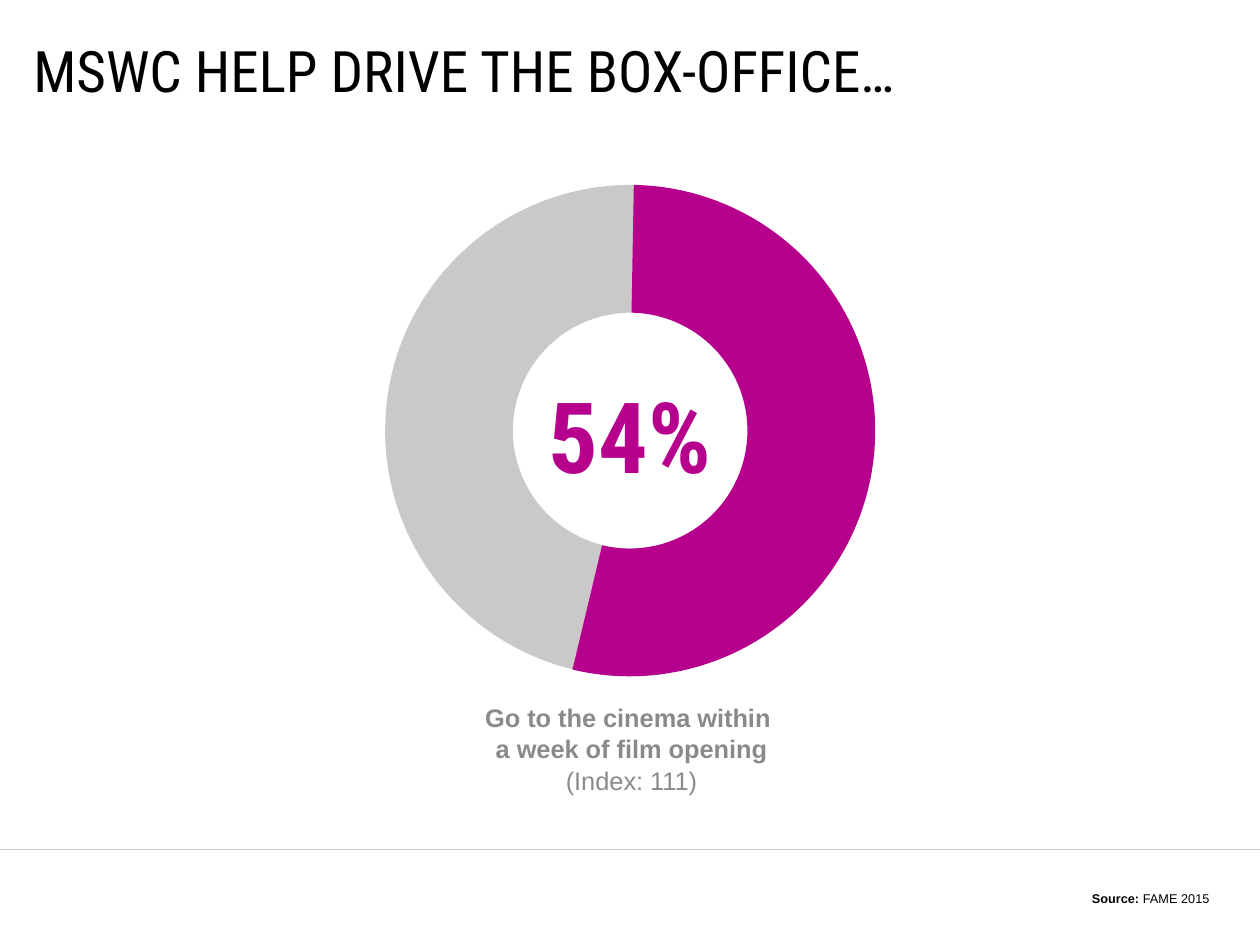
"""Build the slide on how soon the audience sees a newly opened film."""
from dataclasses import dataclass

from lxml import etree
from pptx import Presentation
from pptx.dml.color import RGBColor
from pptx.enum.shapes import MSO_CONNECTOR, MSO_SHAPE
from pptx.enum.text import MSO_ANCHOR, PP_ALIGN
from pptx.oxml.ns import qn
from pptx.util import Cm, Pt

BLOCK_ARC = MSO_SHAPE.BLOCK_ARC
STRAIGHT = MSO_CONNECTOR.STRAIGHT
MIDDLE, BOTTOM = MSO_ANCHOR.MIDDLE, MSO_ANCHOR.BOTTOM
LEFT, CENTER, RIGHT = PP_ALIGN.LEFT, PP_ALIGN.CENTER, PP_ALIGN.RIGHT

SLIDE_WIDTH, SLIDE_HEIGHT = 28, 21
RING_TOP, RING_SIZE, RING_THICKNESS = 4.11, 10.92, 0.26
ADJUSTMENT_PER_DEGREE = 0.6


@dataclass(frozen=True)
class Theme:
    """Colours, fonts and type sizes of the slide."""
    ink: str = "000000"
    accent: str = "B6008D"
    muted: str = "CAC8C8"
    caption: str = "8A8A8D"
    display_font: str = "Roboto Condensed"
    body_font: str = "Arial"
    title_size: float = 36
    figure_size: float = 62
    caption_size: float = 16
    source_size: float = 8
    rule_width: float = 0.5
    body_spacing: float = 1.05


class SlideBuilder:
    """Draws styled elements on the current slide."""

    def __init__(self, slide, theme):
        self.slide = slide
        self.theme = theme

    def rule(self, y):
        """Draw a thin line across the slide."""
        rule = self.slide.shapes.add_connector(
            STRAIGHT, Cm(0), Cm(y), Cm(SLIDE_WIDTH), Cm(y))
        rule.line.color.rgb = RGBColor.from_string(self.theme.muted)
        rule.line.width = Pt(self.theme.rule_width)
        properties = rule._element.find(qn("p:spPr"))
        etree.SubElement(properties, qn("a:effectLst"))

    def ring_part(self, left, start, end, color):
        """Draw a ring segment clockwise between two angles in degrees."""
        part = self.slide.shapes.add_shape(
            BLOCK_ARC, Cm(left), Cm(RING_TOP), Cm(RING_SIZE), Cm(RING_SIZE))
        part.adjustments[0] = start * ADJUSTMENT_PER_DEGREE
        part.adjustments[1] = end * ADJUSTMENT_PER_DEGREE
        part.adjustments[2] = RING_THICKNESS
        part.shadow.inherit = False
        part.fill.solid()
        part.fill.fore_color.rgb = RGBColor.from_string(color)
        part.line.fill.background()

    def text(self, area, paragraphs, font, size, color, align=LEFT,
             anchor=MIDDLE, inset=True, spacing=1.0):
        """Write paragraphs given as lists of (words, bold) runs."""
        box = self.slide.shapes.add_textbox(*(Cm(length) for length in area))
        frame = box.text_frame
        frame.word_wrap = True
        frame.vertical_anchor = anchor
        if not inset:
            frame.margin_left = frame.margin_right = Cm(0)
            frame.margin_top = frame.margin_bottom = Cm(0)
        for index, runs in enumerate(paragraphs):
            paragraph = frame.add_paragraph() if index else frame.paragraphs[0]
            paragraph.alignment = align
            paragraph.line_spacing = spacing
            paragraph.font.name = font
            paragraph.font.size = Pt(size)
            paragraph.font.color.rgb = RGBColor.from_string(color)
            weights = {bold for _, bold in runs}
            if len(weights) == 1:
                paragraph.font.bold = runs[0][1]
            for words, bold in runs:
                for number, line in enumerate(words.split("\n")):
                    if number:
                        paragraph.add_line_break()
                    run = paragraph.add_run()
                    run.text = line
                    if len(weights) > 1:
                        run.font.bold = bold


def main():
    """Create the presentation and save it."""
    presentation = Presentation()
    presentation.slide_width = Cm(SLIDE_WIDTH)
    presentation.slide_height = Cm(SLIDE_HEIGHT)
    theme = Theme()
    slide = presentation.slides.add_slide(presentation.slide_layouts[6])
    builder = SlideBuilder(slide, theme)

    builder.rule(18.87)
    builder.text((0.74, 0.97, 25.86, 1.14),
                 [[("MSWC HELP DRIVE THE BOX-OFFICE…", False)]],
                 theme.display_font, theme.title_size, theme.ink, inset=False)
    builder.text((5.87, 15.47, 16.33, 2.31),
                 [[("Go to the cinema within \na week of film opening", True)],
                  [("(Index: 111)", False)]],
                 theme.body_font, theme.caption_size, theme.caption, CENTER,
                 spacing=theme.body_spacing)
    builder.text((12.22, 19.66, 14.91, 0.61),
                 [[("Source: ", True), ("FAME 2015", False)]],
                 theme.body_font, theme.source_size, theme.ink, RIGHT, BOTTOM,
                 spacing=theme.body_spacing)
    builder.ring_part(8.56, 81.89, 270.87, theme.muted)
    builder.text((11.18, 8.13, 5.64, 2.9), [[("54%", True)]],
                 theme.display_font, theme.figure_size, theme.accent, CENTER,
                 spacing=theme.body_spacing)
    builder.ring_part(8.53, 271.01, 103.42, theme.accent)
    presentation.save("out.pptx")


if __name__ == "__main__":
    main()
